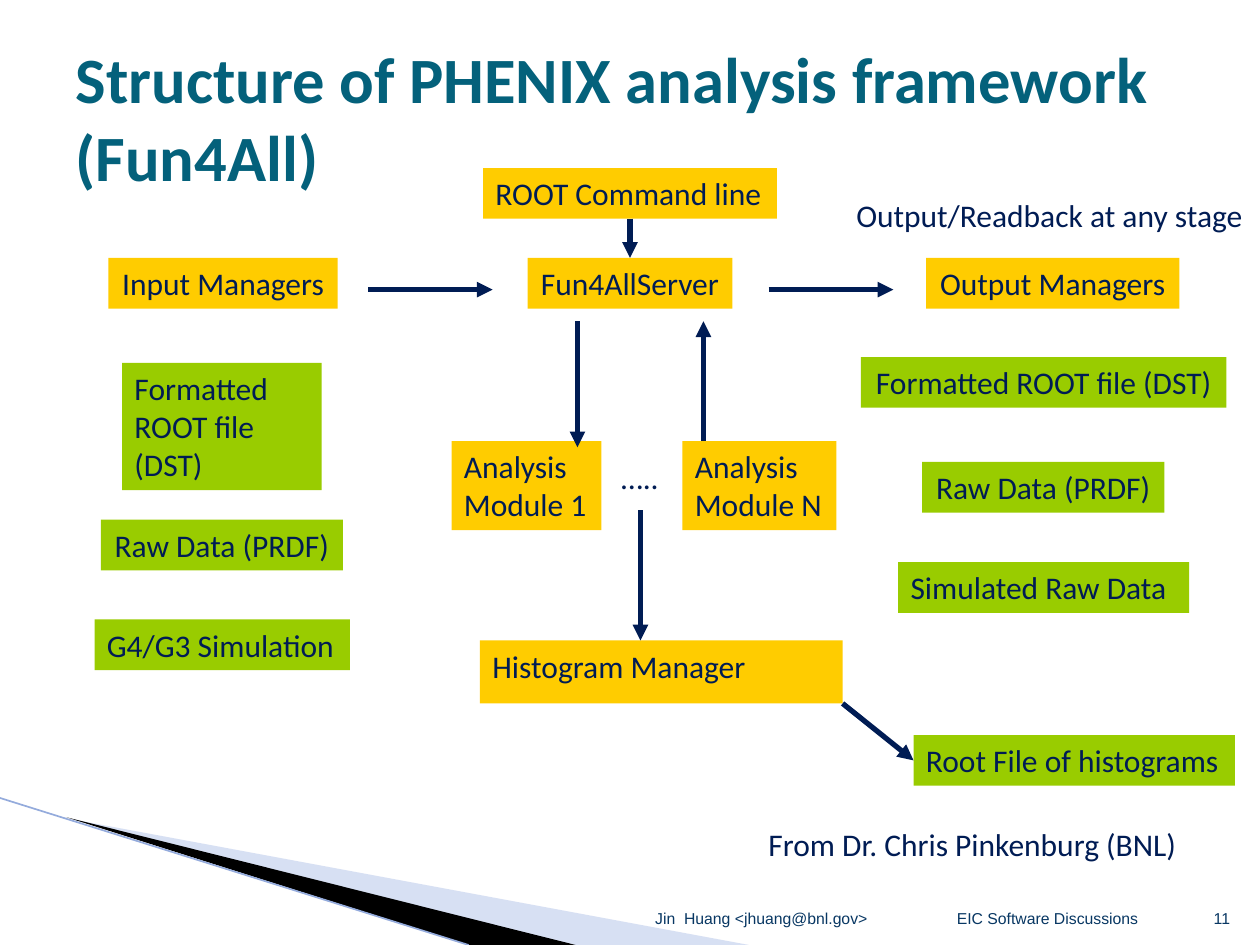
from lxml.etree import SubElement
from pptx import Presentation
from pptx.dml.color import RGBColor
from pptx.enum.shapes import MSO_CONNECTOR, MSO_SHAPE
from pptx.enum.text import MSO_ANCHOR, MSO_AUTO_SIZE, PP_ALIGN
from pptx.oxml.ns import qn
from pptx.util import Pt

COLORS = {
    "title": "04617B", "text": "001C54", "footer": "083763",
    "stage": "FFCC00", "data": "99CC00",
    "wedge": "9DB2E1", "black": "000000", "edge": "94ABDC",
}
LEFT, CENTER, RIGHT = PP_ALIGN.LEFT, PP_ALIGN.CENTER, PP_ALIGN.RIGHT
ROW = 29  # height of a one-line box

TITLE = "Structure of PHENIX analysis framework (Fun4All)"

# name: (lines, fill, left, top, width, height, alignment)
BOXES = {
    "dst in": (["Formatted ROOT file (DST)"], "data", 69.8, 207.4, 114, 72.7, LEFT),
    "raw in": (["Raw Data (PRDF)"], "data", 57.6, 296.9, 138.4, ROW, CENTER),
    "simulation": (["G4/G3 Simulation"], "data", 54, 354, 146, ROW, LEFT),
    "input": (["Input Managers"], "stage", 62, 147.4, 131, ROW, CENTER),
    "server": (["Fun4AllServer"], "stage", 301.5, 147.4, 117, ROW, CENTER),
    "output": (["Output Managers"], "stage", 529.2, 147.4, 144.7, ROW, CENTER),
    "command": (["ROOT Command line"], "stage", 276, 96, 168, ROW, LEFT),
    "module 1": (["Analysis", "Module 1"], "stage", 258, 252, 85.7, 51, LEFT),
    "module N": (["Analysis", "Module N"], "stage", 390, 252, 88, 51, LEFT),
    "dst out": (["Formatted ROOT file (DST)"], "data", 492, 204, 208.8, ROW, CENTER),
    "raw out": (["Raw Data (PRDF)"], "data", 527, 264, 138.4, ROW, CENTER),
    "simulated": (["Simulated Raw Data"], "data", 513.2, 321.2, 166.3, ROW, LEFT),
    "histogram": (["Histogram Manager"], "stage", 274.3, 366, 207.2, 36, LEFT),
    "root file": (["Root File of histograms"], "data", 522, 420, 183.6, ROW, LEFT),
}

# text, left, top, width
LABELS = [
    ("…..", 347.8, 258, 36),
    ("Output/Readback at any stage", 482.2, 108.7, 237.8),
    ("From Dr. Chris Pinkenburg (BNL)", 432, 468, 250.6),
]

# start, end, (start box, side), (end box, side)
ARROWS = [
    ((210.5, 165.5), (281.5, 165.5), None, None),
    ((439.2, 165.5), (510.5, 165.5), None, None),
    ((330, 183.6), (330, 255.6), None, None),
    ((402, 252), (402, 183.6), None, None),
    ((366, 291.6), (366, 366), None, None),
    ((360, 125), (360, 147.4), ("command", 2), ("server", 0)),
    ((481.5, 402), (522, 434.5), None, ("root file", 1)),
]

# text, left, width, alignment
FOOTERS = [
    ("Jin  Huang <jhuang@bnl.gov>", 354, 162, CENTER),
    ("EIC Software Discussions", 516, 165, CENTER),
    ("11", 681, 29, RIGHT),
]

# points, fill, opacity in percent
WEDGES = [
    ([(39.6, 468), (428.4, 540), (328.3, 540)], "wedge", 40),
    ([(38.5, 467.3), (329, 540), (267.8, 540)], "black", 100),
]


def color(name):
    return RGBColor.from_string(COLORS[name])


def write(shape, lines, size, font_name, color_name, alignment, anchor=MSO_ANCHOR.TOP):
    frame = shape.text_frame
    frame.text = "\n".join(lines)
    frame.word_wrap = True
    frame.auto_size = MSO_AUTO_SIZE.NONE
    frame.vertical_anchor = anchor
    for paragraph in frame.paragraphs:
        paragraph.alignment = alignment
        font = paragraph.font
        font.size, font.name = Pt(size), font_name
        font.color.rgb = color(color_name)
    return frame


def write_label(shape, lines, alignment):
    frame = write(shape, lines, 18, "Calibri", "text", alignment)
    frame.margin_left = Pt(7.2 if alignment == LEFT else 0)
    frame.margin_right = 0


def add_line(slide, start, end, color_name, width):
    line = slide.shapes.add_connector(
        MSO_CONNECTOR.STRAIGHT, *[Pt(value) for value in start + end])
    line.line.color.rgb = color(color_name)
    line.line.width = Pt(width)
    SubElement(line._element.spPr, qn("a:effectLst"))
    return line


presentation = Presentation()
presentation.slide_width, presentation.slide_height = Pt(720), Pt(540)
slide = presentation.slides.add_slide(presentation.slide_layouts[5])

# Corner decoration
for points, fill, opacity in WEDGES:
    builder = slide.shapes.build_freeform(*points[0], scale=Pt(1))
    builder.add_line_segments(points[1:], close=True)
    wedge = builder.convert_to_shape()
    wedge.shadow.inherit = False
    wedge.fill.solid()
    wedge.fill.fore_color.rgb = color(fill)
    wedge.line.fill.background()
    if opacity < 100:
        rgb = wedge._element.spPr.find(".//" + qn("a:srgbClr"))
        SubElement(rgb, qn("a:alpha")).set("val", str(opacity * 1000))
add_line(slide, (0, 456), (267.8, 540), "edge", 0.95)

# Title
title = slide.shapes.title
title.left, title.top, title.width, title.height = Pt(36), Pt(21.6), Pt(648), Pt(90)
write(title, [TITLE], 36.9, "Calibri", "title", LEFT, MSO_ANCHOR.MIDDLE)
title.text_frame.paragraphs[0].font.bold = True

# Boxes
boxes = {}
for name, (lines, fill, *bounds, alignment) in BOXES.items():
    box = slide.shapes.add_shape(MSO_SHAPE.RECTANGLE, *[Pt(value) for value in bounds])
    box.shadow.inherit = False
    box.fill.solid()
    box.fill.fore_color.rgb = color(fill)
    box.line.fill.background()
    write_label(box, lines, alignment)
    boxes[name] = box

# Free labels
for text, left, top, width in LABELS:
    label = slide.shapes.add_textbox(Pt(left), Pt(top), Pt(width), Pt(ROW))
    write_label(label, [text], LEFT)

# Arrows
for start, end, source, target in ARROWS:
    arrow = add_line(slide, start, end, "text", 3)
    if source:
        arrow.begin_connect(boxes[source[0]], source[1])
    if target:
        arrow.end_connect(boxes[target[0]], target[1])
    SubElement(arrow.line._get_or_add_ln(), qn("a:tailEnd")).set("type", "triangle")

# Footer
for text, left, width, alignment in FOOTERS:
    footer = slide.shapes.add_textbox(Pt(left), Pt(504.7), Pt(width), Pt(28.8))
    write(footer, [text], 9, "Arial", "footer", alignment, MSO_ANCHOR.BOTTOM)

presentation.save("out.pptx")
